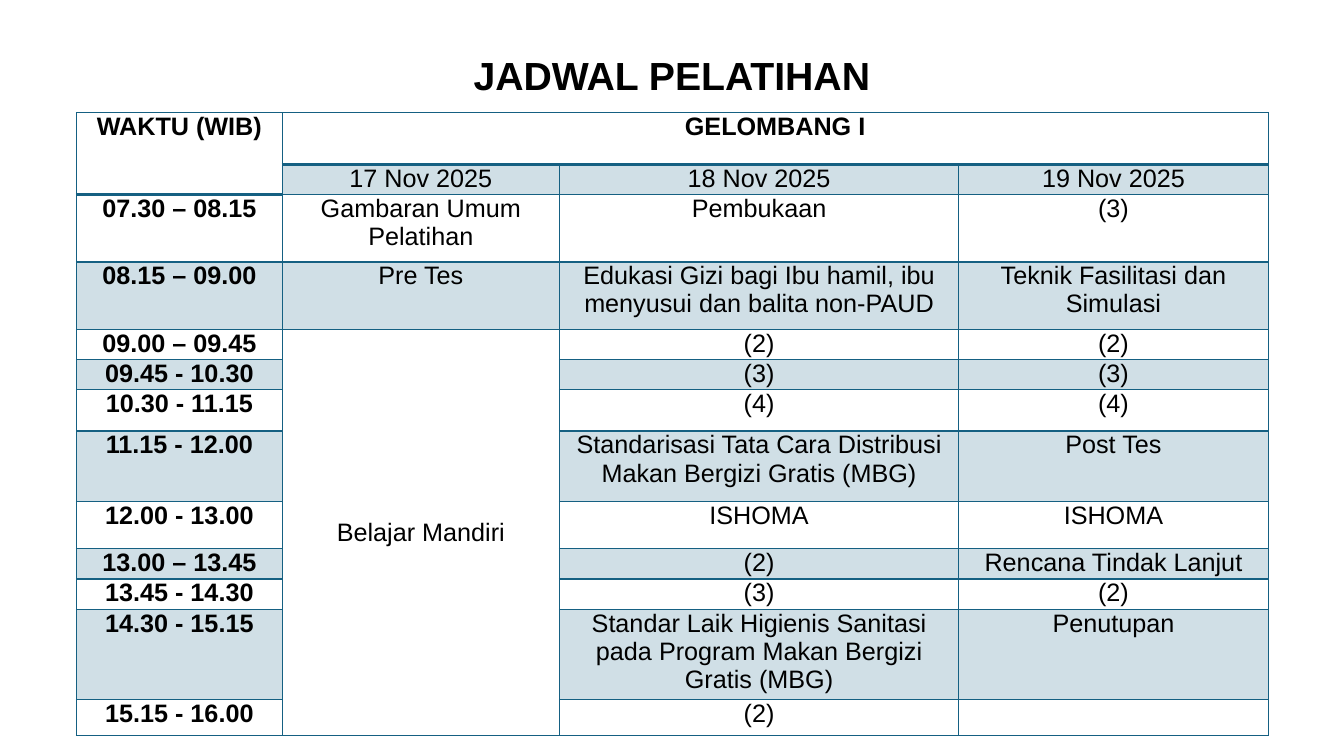
import lxml.etree
import pptx
import pptx.dml.color
import pptx.enum.text
import pptx.oxml.ns
import pptx.util

Cm, Pt = pptx.util.Cm, pptx.util.Pt
RGB = pptx.dml.color.RGBColor.from_string
ALIGN = pptx.enum.text.PP_ALIGN
ANCHOR = pptx.enum.text.MSO_ANCHOR
qn = pptx.oxml.ns.qn

COLORS = {"text": "000000", "teal": "156082"}
FONT = "Arial"

COL_WIDTHS = [5.18, 6.99, 10.06, 7.8]
ROW_HEIGHTS = [1.3, 0.76, 1.7, 1.7, 0.76, 0.76, 1.04, 1.78, 1.19, 0.76, 0.76, 2.28, 0.9]
SCHEDULE = [
    ["WAKTU (WIB)", "GELOMBANG I", "", ""],
    ["", "17 Nov 2025", "18 Nov 2025", "19 Nov 2025"],
    ["07.30 – 08.15", "Gambaran Umum Pelatihan", "Pembukaan", "(3)"],
    ["08.15 – 09.00", "Pre Tes",
     "Edukasi Gizi bagi Ibu hamil, ibu menyusui dan balita non-PAUD",
     "Teknik Fasilitasi dan Simulasi"],
    ["09.00 – 09.45", "Belajar Mandiri", "(2)", "(2)"],
    ["09.45 - 10.30", "", "(3)", "(3)"],
    ["10.30 - 11.15", "", "(4)", "(4)"],
    ["11.15 - 12.00", "",
     "Standarisasi Tata Cara Distribusi Makan Bergizi Gratis (MBG)", "Post Tes"],
    ["12.00 - 13.00", "", "ISHOMA", "ISHOMA"],
    ["13.00 – 13.45", "", "(2)", "Rencana Tindak Lanjut"],
    ["13.45 - 14.30", "", "(3)", "(2)"],
    ["14.30 - 15.15", "",
     "Standar Laik Higienis Sanitasi pada Program Makan Bergizi Gratis (MBG)", "Penutupan"],
    ["15.15 - 16.00", "", "(2)", ""],
]
# First and last (row, column) of each merged block
MERGES = [((0, 0), (1, 0)), ((0, 1), (0, 3)), ((4, 1), (12, 1))]


def write(tf, text, size=18, bold=False, align=ALIGN.CENTER):
    p = tf.paragraphs[0]
    p.alignment = align
    p.font.size = Pt(size)
    if text:
        r = p.add_run()
        r.text = text
        r.font.name, r.font.size, r.font.bold = FONT, Pt(size), bold
        r.font.color.rgb = RGB(COLORS["text"])


class Deck:
    def __init__(self, width, height):
        self.prs = pptx.Presentation()
        self.prs.slide_width, self.prs.slide_height = Cm(width), Cm(height)
        self.s = None

    def add_slide(self):
        self.s = self.prs.slides.add_slide(self.prs.slide_layouts[6])

    def title(self, text, left, top, width, height):
        sp = self.s.shapes.add_textbox(Cm(left), Cm(top), Cm(width), Cm(height))
        sp.text_frame.word_wrap = True
        write(sp.text_frame, text, size=28, bold=True)

    def borders(self, cell, bottom=1):
        tc_pr = cell._tc.get_or_add_tcPr()
        for side, width in (("L", 1), ("R", 1), ("T", 1), ("B", bottom)):
            ln = lxml.etree.SubElement(tc_pr, qn(f"a:ln{side}"), w=str(Pt(width)))
            fill = lxml.etree.SubElement(ln, qn("a:solidFill"))
            lxml.etree.SubElement(fill, qn("a:srgbClr"), val=COLORS["teal"])

    def fill(self, cell, shaded):
        """Tint the cell with 20 % teal, or leave it clear."""
        if not shaded:
            cell.fill.background()
            return
        cell.fill.solid()
        cell.fill.fore_color.rgb = RGB(COLORS["teal"])
        color = cell._tc.tcPr.find(f"{qn('a:solidFill')}/{qn('a:srgbClr')}")
        lxml.etree.SubElement(color, qn("a:alpha"), val="20000")

    def schedule(self, left, top):
        table = self.s.shapes.add_table(
            len(ROW_HEIGHTS), len(COL_WIDTHS), Cm(left), Cm(top),
            Cm(sum(COL_WIDTHS)), Cm(sum(ROW_HEIGHTS))).table
        table.first_row = table.horz_banding = False
        for column, width in zip(table.columns, COL_WIDTHS):
            column.width = Cm(width)
        for row, height in zip(table.rows, ROW_HEIGHTS):
            row.height = Cm(height)
        for first, last in MERGES:
            table.cell(*first).merge(table.cell(*last))
        for i, texts in enumerate(SCHEDULE):
            for j, text in enumerate(texts):
                cell = table.cell(i, j)
                cell.margin_left = cell.margin_right = Cm(0.13)
                cell.margin_top = cell.margin_bottom = 0
                write(cell.text_frame, text, bold=i == 0 or j == 0)
                header = i == 0 or (i, j) == (1, 0)
                self.borders(cell, bottom=2 if header else 1)
                self.fill(cell, i % 2 == 1 and not cell.is_spanned)
        table.cell(4, 1).vertical_anchor = ANCHOR.MIDDLE


def main():
    deck = Deck(33.87, 19.05)
    deck.add_slide()
    deck.schedule(1.93, 2.84)
    deck.title("JADWAL PELATIHAN", 10.11, 1.17, 13.64, 1.45)
    deck.prs.save("out.pptx")


if __name__ == "__main__":
    main()
